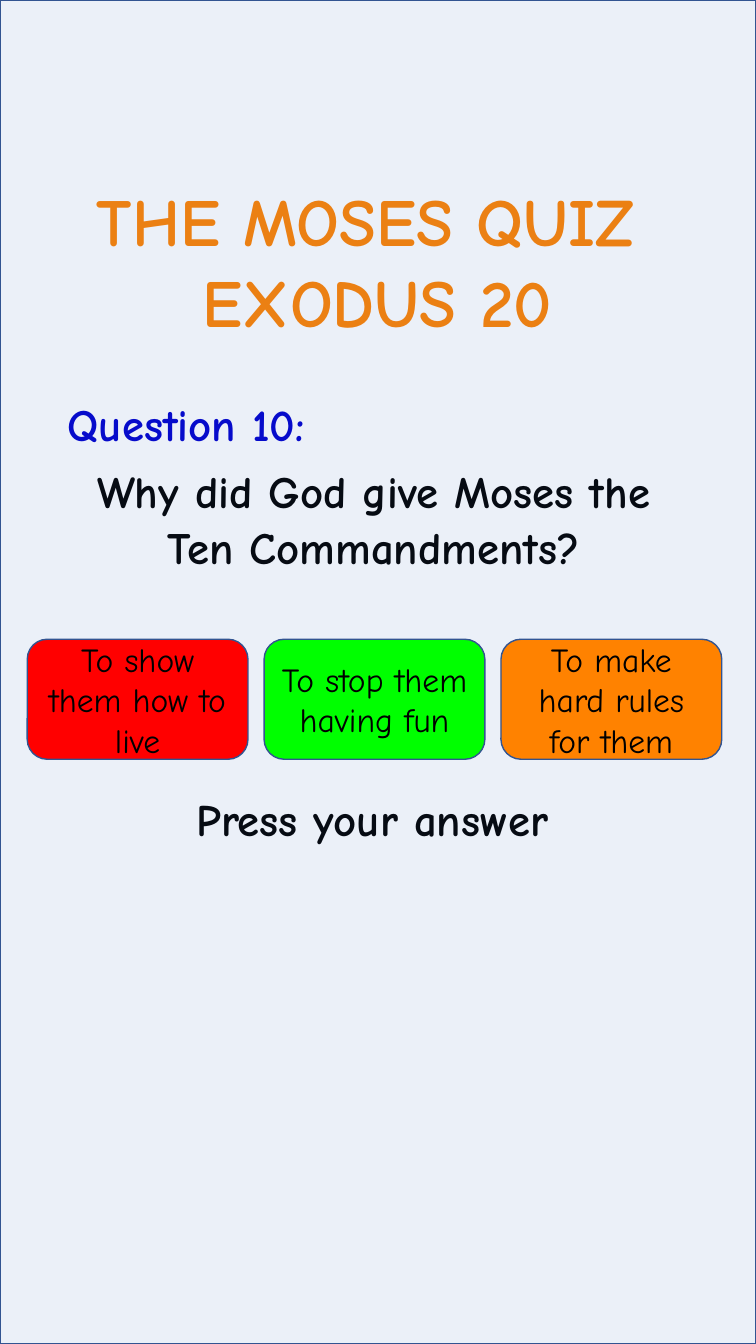
from dataclasses import dataclass

import pptx
import pptx.dml.color
import pptx.enum.shapes
import pptx.enum.text
import pptx.oxml
import pptx.oxml.ns
import pptx.util
from pptx.util import Inches

SHAPE = pptx.enum.shapes.MSO_SHAPE
ALIGN = pptx.enum.text.PP_ALIGN
ANCHOR = pptx.enum.text.MSO_ANCHOR
AUTO = pptx.enum.text.MSO_AUTO_SIZE


@dataclass(frozen=True)
class Theme:
    font: str = "Comic Neue"
    title_size: int = 48
    body_size: int = 32
    answer_size: int = 24
    title: str = "FF8200"
    label: str = "0000CC"
    ink: str = "000000"
    wash: str = "4472C4"
    wash_alpha: int = 10
    line: str = "325491"
    line_width: int = 1
    answers: tuple = ("FF0000", "00FF00", "FF8200")


THEME = Theme()


def rgb(value):
    return pptx.dml.color.RGBColor.from_string(value)


def style(p, size, color, bold=True, align=ALIGN.CENTER):
    p.alignment = align
    p.font.name = THEME.font
    p.font.size = pptx.util.Pt(size)
    p.font.bold = bold
    p.font.color.rgb = rgb(color)


def add_text(slide, box, lines, size, color, wrap=True, align=ALIGN.CENTER):
    tf = slide.shapes.add_textbox(*map(Inches, box)).text_frame
    tf.word_wrap = wrap
    tf.auto_size = AUTO.NONE if wrap else AUTO.SHAPE_TO_FIT_TEXT
    tf.text = "\n".join(lines)
    for p in tf.paragraphs:
        style(p, size, color, align=align)
    return tf


def add_panel(slide, kind, box, fill):
    sp = slide.shapes.add_shape(kind, *map(Inches, box))
    sp.shadow.inherit = False
    sp.fill.solid()
    sp.fill.fore_color.rgb = rgb(fill)
    sp.line.color.rgb = rgb(THEME.line)
    sp.line.width = pptx.util.Pt(THEME.line_width)
    return sp


def add_heading(slide, left, top, width):
    # The space after QUIZ shifts the centred first line
    add_text(slide, (left, top, width, 1.72), ["THE MOSES QUIZ ", "EXODUS 20"],
             THEME.title_size, THEME.title, wrap=False)


def add_question(slide, left, top, width):
    add_text(slide, (left, top, 3.04, 0.64), ["Question 10:"],
             THEME.body_size, THEME.label, wrap=False)
    tf = add_text(slide, (left + 0.2, top + 0.64, width - 0.2, 1.77),
                  ["Why did God give Moses the Ten Commandments?"],
                  THEME.body_size, THEME.ink)
    p = tf.paragraphs[0]
    p.line_spacing = pptx.util.Pt(40)
    p.space_before = pptx.util.Pt(7.5)


def add_prompt(slide, left, top, width):
    tf = add_text(slide, (left, top, width, 0.72), ["Press your answer"],
                  THEME.body_size, THEME.ink, align=ALIGN.LEFT)
    p = tf.paragraphs[0]
    p.line_spacing = 0.9
    p.space_before = pptx.util.Pt(7.5)


def add_wash(slide, width, height):
    sp = add_panel(slide, SHAPE.RECTANGLE, (0, 0, width, height), THEME.wash)
    color = sp.fill._xPr.find(".//" + pptx.oxml.ns.qn("a:srgbClr"))
    color.append(pptx.oxml.parse_xml(
        f'<a:alpha {pptx.oxml.ns.nsdecls("a")} val="{THEME.wash_alpha * 1000}"/>'))


def add_answers(slide, left, top, width, answers):
    button_width = 2.19
    step = (width - button_width) / (len(answers) - 1)
    for i, (answer, fill) in enumerate(zip(answers, THEME.answers)):
        box = (left + i * step, top, button_width, 1.19)
        tf = add_panel(slide, SHAPE.ROUNDED_RECTANGLE, box, fill).text_frame
        tf.word_wrap = True
        tf.vertical_anchor = ANCHOR.MIDDLE
        tf.text = answer
        style(tf.paragraphs[0], THEME.answer_size, THEME.ink, bold=False)


def main():
    width, height = 7.5, 13.33
    prs = pptx.Presentation()
    prs.slide_width, prs.slide_height = Inches(width), Inches(height)
    slide = prs.slides.add_slide(prs.slide_layouts[6])

    # Texts lie beneath the translucent wash, answer buttons above it
    add_heading(slide, 0.3, 1.73, 6.89)
    add_question(slide, 0.33, 3.89, 6.56)
    add_prompt(slide, 1.85, 7.86, 4.22)
    add_wash(slide, width, height)
    add_answers(slide, 0.27, 6.34, 6.89, [
        "To show them how to live",
        "To stop them having fun",
        "To make hard rules for them",
    ])
    prs.save("out.pptx")


if __name__ == "__main__":
    main()
